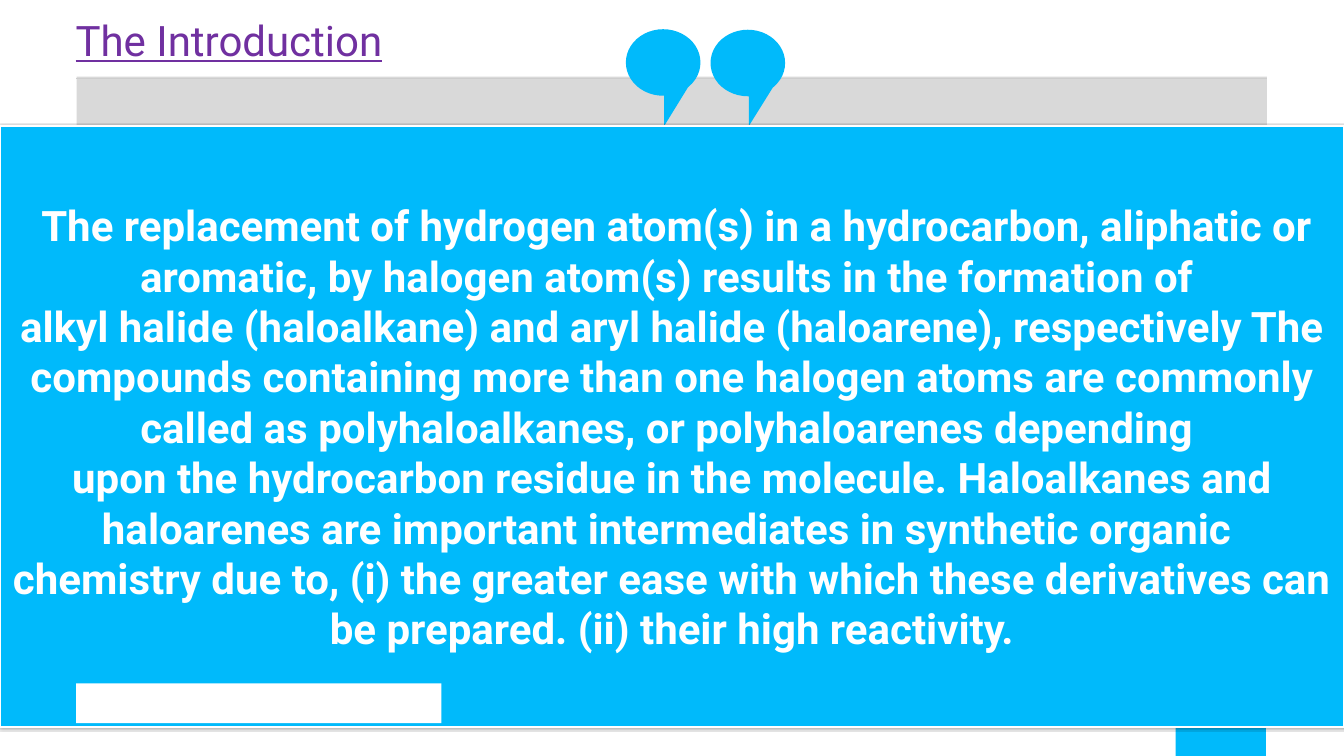
"""Build the introduction slide on haloalkanes and haloarenes."""
from dataclasses import dataclass
from math import cos, radians, sin

from lxml.etree import SubElement
from pptx import Presentation
from pptx.dml.color import RGBColor
from pptx.enum.shapes import MSO_CONNECTOR, MSO_SHAPE
from pptx.enum.text import MSO_ANCHOR, MSO_AUTO_SIZE, PP_ALIGN
from pptx.oxml.ns import qn
from pptx.shapes.autoshape import Shape
from pptx.slide import Slide
from pptx.text.text import TextFrame
from pptx.util import Inches, Pt


@dataclass(frozen=True)
class Theme:
    """Hold the colours, font and type size of the deck."""

    blue: str = "00BAFB"
    grey: str = "D9D9D9"
    rule: str = "CDCDCD"
    white: str = "FFFFFF"
    purple: str = "7030A0"
    black: str = "000000"
    font: str = "Roboto"
    size: int = 60


@dataclass(frozen=True)
class Block:
    """Describe a plain rectangle in inches."""

    left: float
    top: float
    width: float
    height: float
    fill: str


THEME = Theme()
BACKDROP = Block(1.52, 1.52, 23.62, 12.05, THEME.grey)
PAGE_TAB = Block(23.33, 13.54, 1.79, 1.46, THEME.blue)
PANEL = Block(0, 2.5, 26.67, 11.92, THEME.blue)
FOOTER = Block(1.51, 13.56, 7.25, 0.79, THEME.white)
QUOTE_CENTRES = ((14.84, 1.25), (13.16, 1.24))
QUOTE_RADII = (0.74, 0.66)
QUOTE_ANGLES = (90, 180, 270, 360, 405)
QUOTE = (
    " The replacement of hydrogen atom(s) in a hydrocarbon, aliphatic or aromatic, "
    "by halogen atom(s) results in the formation of ",
    "alkyl halide (haloalkane) and aryl halide (haloarene), respectively The compounds "
    "containing more than one halogen atoms are commonly called as polyhaloalkanes, "
    "or polyhaloarenes depending ",
    "upon the hydrocarbon residue in the molecule. Haloalkanes and haloarenes are "
    "important intermediates in synthetic organic ",
    "chemistry due to, (i) the greater ease with which these derivatives can be "
    "prepared. (ii) their high reactivity.",
)


def color(value: str) -> RGBColor:
    """Turn a hex string into a colour."""
    return RGBColor.from_string(value)


def write(frame: TextFrame, *texts: str, ink: str, align: PP_ALIGN,
          bold: bool = False, underline: bool = False) -> None:
    """Fill a text frame with one formatted paragraph per text."""
    frame.word_wrap = True
    frame.auto_size = MSO_AUTO_SIZE.NONE
    frame.vertical_anchor = MSO_ANCHOR.MIDDLE
    frame.margin_left = frame.margin_right = frame.margin_top = frame.margin_bottom = 0
    for index, text in enumerate(texts):
        para = frame.add_paragraph() if index else frame.paragraphs[0]
        para.alignment = align
        span = para.add_run()
        span.text = text
        span.font.name = THEME.font
        span.font.size = Pt(THEME.size)
        span.font.bold = bold
        span.font.underline = underline
        span.font.color.rgb = color(ink)


def paint(shape: Shape, fill: str) -> None:
    """Give a shape a flat fill without outline or shadow."""
    shape.shadow.inherit = False
    shape.fill.solid()
    shape.fill.fore_color.rgb = color(fill)
    shape.line.fill.background()


def add_block(page: Slide, block: Block) -> Shape:
    """Draw a plain rectangle."""
    box = page.shapes.add_shape(
        MSO_SHAPE.RECTANGLE, Inches(block.left), Inches(block.top),
        Inches(block.width), Inches(block.height))
    paint(box, block.fill)
    return box


def add_title(page: Slide, text: str) -> None:
    """Place and format the title."""
    title = page.shapes.title
    title.left, title.top = Inches(1.5), Inches(0)
    title.width, title.height = Inches(23.64), Inches(1.58)
    write(title.text_frame, text, ink=THEME.purple, align=PP_ALIGN.LEFT, underline=True)


def add_rule(page: Slide) -> None:
    """Draw the line under the title."""
    rule = page.shapes.add_connector(
        MSO_CONNECTOR.STRAIGHT, Inches(1.51), Inches(1.56), Inches(25.15), Inches(1.56))
    rule.line.color.rgb = color(THEME.rule)
    rule.line.width = Pt(1)
    SubElement(rule.element.spPr, qn("a:effectLst"))


def quote_outline(centre_x: float, centre_y: float) -> list[tuple[int, int]]:
    """List the corners of a round quotation mark and its tail."""
    radius_x, radius_y = QUOTE_RADII
    points = [(centre_x + radius_x * cos(radians(angle)),
               centre_y + radius_y * sin(radians(angle))) for angle in QUOTE_ANGLES]
    points += [(centre_x + 0.02, 2.5), (centre_x + 0.02, centre_y + radius_y)]
    return [(Inches(x), Inches(y)) for x, y in points]


def round_quote_marks(marks: Shape) -> None:
    """Turn the round sides of both marks into arcs."""
    width, height = (str(Inches(radius)) for radius in QUOTE_RADII)
    for move in list(marks.element.iter(qn("a:moveTo"))):
        for start, end in zip(QUOTE_ANGLES, QUOTE_ANGLES[1:]):
            side = move.getnext() if start == QUOTE_ANGLES[0] else side.getnext()
            for point in list(side):
                side.remove(point)
            side.tag = qn("a:arcTo")
            side.set("wR", width)
            side.set("hR", height)
            side.set("stAng", str(start * 60000))
            side.set("swAng", str((end - start) * 60000))


def add_quote_marks(page: Slide) -> None:
    """Draw both quotation marks as one outline."""
    first, second = (quote_outline(*centre) for centre in QUOTE_CENTRES)
    builder = page.shapes.build_freeform(*first[0])
    builder.add_line_segments(first[1:])
    builder.move_to(*second[0])
    builder.add_line_segments(second[1:])
    marks = builder.convert_to_shape()
    round_quote_marks(marks)
    paint(marks, THEME.blue)


def add_shadow(shape: Shape) -> None:
    """Drop a soft shadow straight below a shape."""
    effects = shape.element.spPr.find(qn("a:effectLst"))
    shadow = SubElement(effects, qn("a:outerShdw"), blurRad=str(Pt(3.1)),
                        dist=str(Pt(1.6)), dir="5400000", rotWithShape="0")
    tint = SubElement(shadow, qn("a:srgbClr"), val=THEME.black)
    SubElement(tint, qn("a:alpha"), val="38000")


def add_panel(page: Slide) -> None:
    """Draw the blue panel with the quoted text."""
    panel = add_block(page, PANEL)
    panel.line.color.rgb = color(THEME.white)
    panel.line.width = Pt(3)
    add_shadow(panel)
    write(panel.text_frame, *QUOTE, ink=THEME.white, align=PP_ALIGN.CENTER, bold=True)


def main() -> None:
    """Build and save the deck."""
    deck = Presentation()
    deck.slide_width, deck.slide_height = Inches(26.67), Inches(15)
    page = deck.slides.add_slide(deck.slide_layouts[5])
    add_title(page, "The Introduction")
    add_block(page, BACKDROP)
    add_block(page, PAGE_TAB)
    add_rule(page)
    add_quote_marks(page)
    add_panel(page)
    add_block(page, FOOTER)
    deck.save("out.pptx")


if __name__ == "__main__":
    main()
